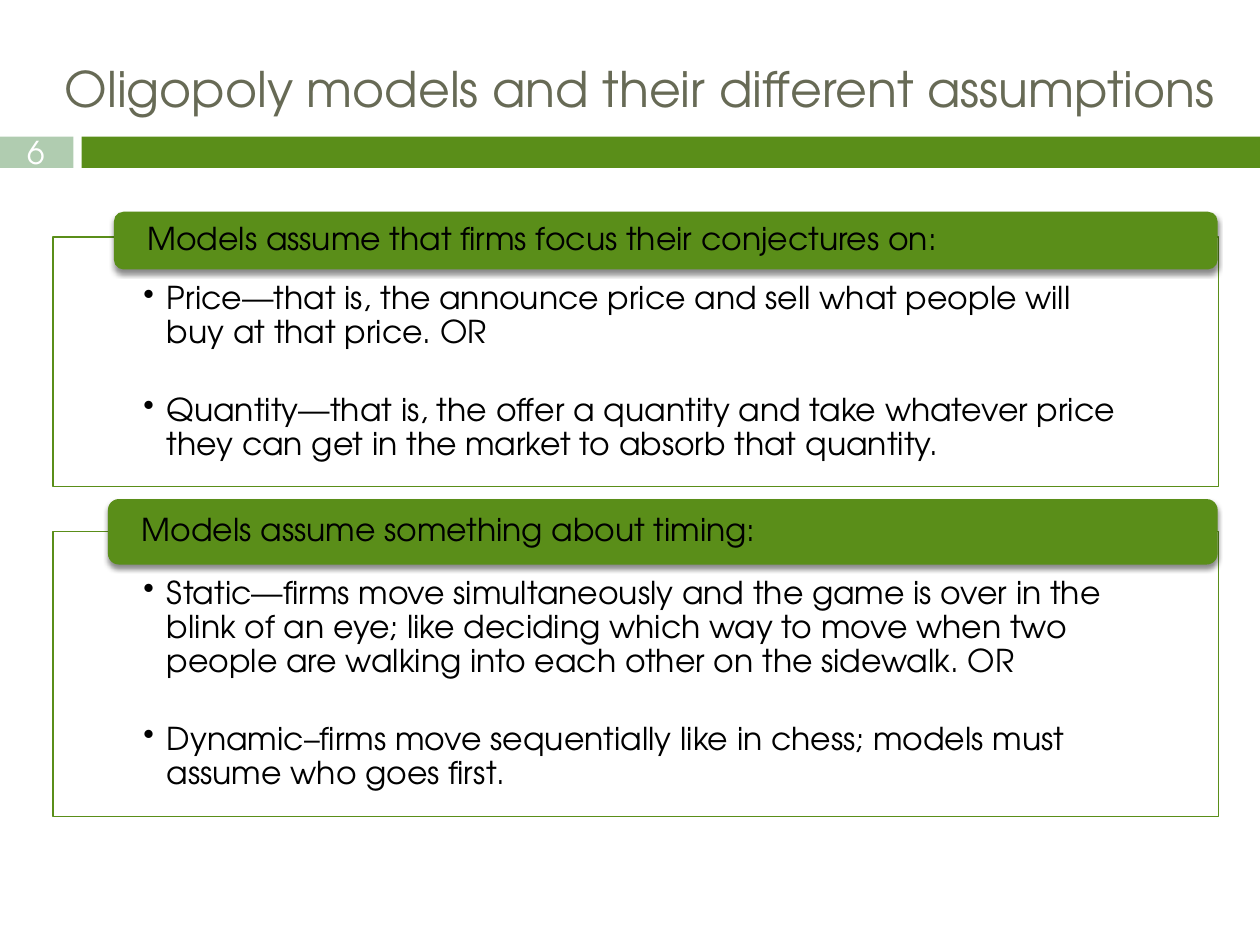
import pptx
import pptx.util
import pptx.dml.color
import pptx.enum.shapes
import pptx.enum.text
import pptx.oxml
import pptx.oxml.ns

Pt = pptx.util.Pt
RGBColor = pptx.dml.color.RGBColor
Shape = pptx.enum.shapes.MSO_SHAPE
Align = pptx.enum.text.PP_ALIGN
Anchor = pptx.enum.text.MSO_ANCHOR

GREEN = RGBColor(0x5A, 0x8E, 0x19)
SAGE = RGBColor(0xB0, 0xCC, 0xB0)
OLIVE = RGBColor(0x67, 0x6A, 0x55)
WHITE = RGBColor(0xFF, 0xFF, 0xFF)
BLACK = RGBColor(0x00, 0x00, 0x00)
FONT = "TeX Gyre Adventor"

TITLE = "Oligopoly models and their different assumptions"
PAGE = "6"
# Tops and heights are in points.
SECTIONS = [
    {
        "heading": "Models assume that firms focus their conjectures on:",
        "heading_box": (65.1, 121, 630.7, 33),
        "panel_top": 135.4, "panel_height": 142.6,
        "points": [
            "Price—that is, the announce price and sell what people will "
            "buy at that price. OR",
            "Quantity—that is, the offer a quantity and take whatever price "
            "they can get in the market to absorb that quantity.",
        ],
    },
    {
        "heading": "Models assume something about timing:",
        "heading_box": (61.7, 285.2, 634.1, 37.4),
        "panel_top": 303.8, "panel_height": 162.7,
        "points": [
            "Static—firms move simultaneously and the game is over in the "
            "blink of an eye; like deciding which way to move when two "
            "people are walking into each other on the sidewalk. OR",
            "Dynamic–firms move sequentially like in chess; models must "
            "assume who goes first.",
        ],
    },
]
PANEL_LEFT, PANEL_WIDTH = 30.2, 666
BULLET_INDENT = 13.5
POINT_GAP = 25

SHADOW_XML = (
    f'<a:effectLst {pptx.oxml.ns.nsdecls("a")}>'
    f'<a:outerShdw blurRad="{Pt(3)}" dist="{Pt(2.4)}" dir="5400000" rotWithShape="0">'
    '<a:srgbClr val="000000"><a:alpha val="45000"/></a:srgbClr>'
    '</a:outerShdw></a:effectLst>'
)


def add_box(slide, kind, box, fill, line=None):
    shape = slide.shapes.add_shape(kind, *map(Pt, box))
    shape.shadow.inherit = False
    shape.fill.solid()
    shape.fill.fore_color.rgb = fill
    if line is None:
        shape.line.fill.background()
    else:
        shape.line.color.rgb = line
        shape.line.width = Pt(0.79)
    return shape


def set_text(shape, texts, size, color, margins, anchor=Anchor.TOP,
             align=Align.LEFT, spacing=1.0, bullets=False):
    """Write one paragraph per text; margins are left, top, right, bottom."""
    frame = shape.text_frame
    left, top, right, bottom = map(Pt, margins)
    frame_format = {
        "word_wrap": True, "vertical_anchor": anchor, "margin_left": left,
        "margin_top": top, "margin_right": right, "margin_bottom": bottom,
    }
    for name, value in frame_format.items():
        setattr(frame, name, value)
    for index, text in enumerate(texts):
        paragraph = frame.paragraphs[0] if index == 0 else frame.add_paragraph()
        paragraph.text = text
        paragraph.alignment = align
        paragraph.line_spacing = spacing
        if index:
            paragraph.space_before = Pt(POINT_GAP)
        if bullets:
            properties = paragraph._p.get_or_add_pPr()
            properties.set("marL", str(Pt(BULLET_INDENT)))
            properties.set("indent", str(-Pt(BULLET_INDENT)))
            properties.append(pptx.oxml.parse_xml(
                f'<a:buChar {pptx.oxml.ns.nsdecls("a")} char="•"/>'))
        font = paragraph.runs[0].font
        for name, value in {"name": FONT, "size": Pt(size)}.items():
            setattr(font, name, value)
        font.color.rgb = color


def add_section(slide, section):
    panel = add_box(
        slide, Shape.RECTANGLE,
        (PANEL_LEFT, section["panel_top"], PANEL_WIDTH, section["panel_height"]),
        WHITE, GREEN)
    set_text(panel, section["points"], 18, BLACK, (51.7, 26, 51.7, 10),
             spacing=0.9, bullets=True)

    heading = add_box(slide, Shape.ROUNDED_RECTANGLE, section["heading_box"], GREEN)
    properties = heading._element.spPr
    properties.replace(properties.find(pptx.oxml.ns.qn("a:effectLst")),
                       pptx.oxml.parse_xml(SHADOW_XML))
    set_text(heading, [section["heading"]], 18, BLACK, (17.5, 0, 17.5, 0),
             anchor=Anchor.MIDDLE, spacing=0.9)


def main():
    deck = pptx.Presentation()
    deck.slide_width, deck.slide_height = Pt(720), Pt(540)
    slide = deck.slides.add_slide(deck.slide_layouts[6])

    add_box(slide, Shape.RECTANGLE, (46.6, 78, 673.4, 18), GREEN)
    page_box = add_box(slide, Shape.RECTANGLE, (0, 78, 42, 18), SAGE)
    set_text(page_box, [PAGE], 18, WHITE, (0, 0, 0, 0),
             anchor=Anchor.MIDDLE, align=Align.CENTER)

    title = slide.shapes.add_textbox(Pt(30), Pt(30), Pt(708), Pt(47))
    set_text(title, [TITLE], 28, OLIVE, (7.2, 3.6, 7.2, 3.6))

    for section in SECTIONS:
        add_section(slide, section)
    deck.save("out.pptx")


if __name__ == "__main__":
    main()
